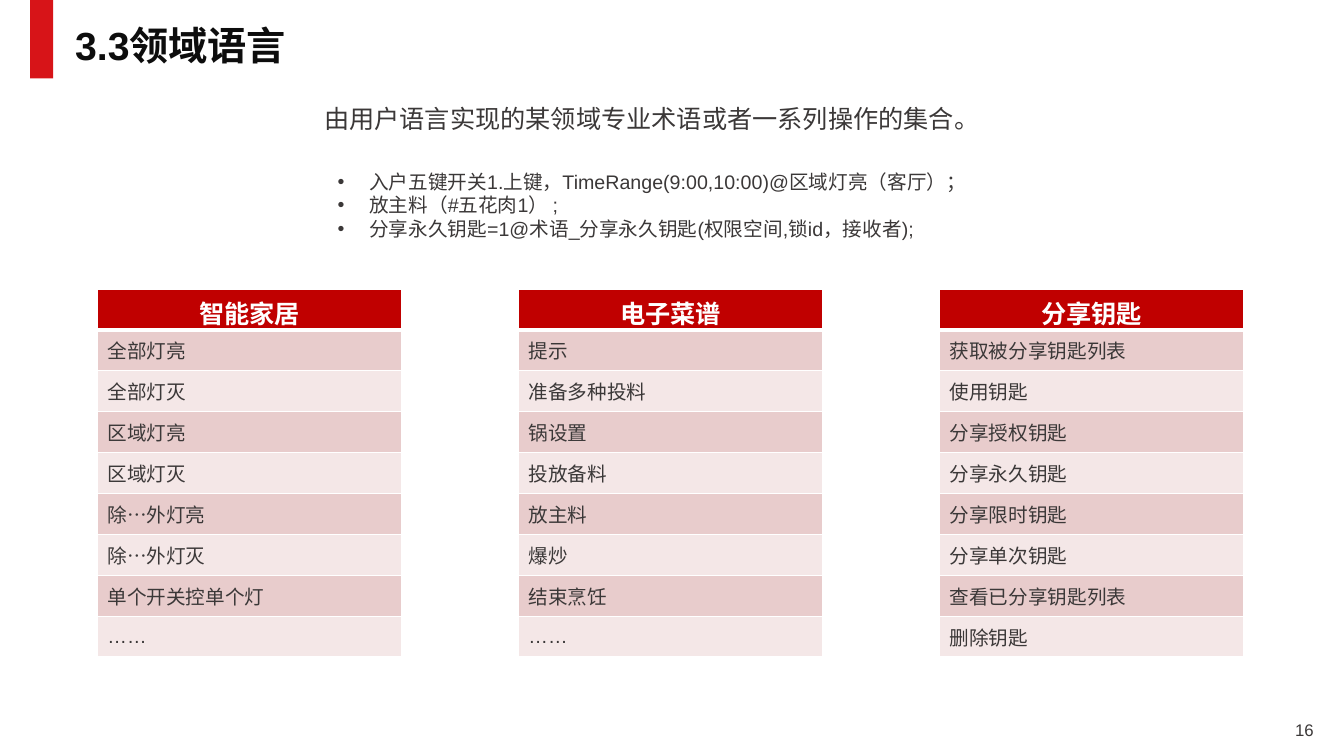
import pptx
import pptx.util
import pptx.dml.color
import pptx.enum.text
import pptx.enum.shapes
import pptx.oxml
import pptx.oxml.ns

Pt = pptx.util.Pt
Color = pptx.dml.color.RGBColor
Align = pptx.enum.text.PP_ALIGN
Anchor = pptx.enum.text.MSO_ANCHOR

TITLE = "3.3领域语言"
LEAD = "由用户语言实现的某领域专业术语或者一系列操作的集合。"
RULES = [
    "入户五键开关1.上键，TimeRange(9:00,10:00)@区域灯亮（客厅）；",
    "放主料（#五花肉1） ;",
    "分享永久钥匙=1@术语_分享永久钥匙(权限空间,锁id，接收者);",
]
TABLES = [
    ("智能家居", "全部灯亮", "全部灯灭", "区域灯亮", "区域灯灭",
     "除…外灯亮", "除…外灯灭", "单个开关控单个灯", "……"),
    ("电子菜谱", "提示", "准备多种投料", "锅设置", "投放备料",
     "放主料", "爆炒", "结束烹饪", "……"),
    ("分享钥匙", "获取被分享钥匙列表", "使用钥匙", "分享授权钥匙", "分享永久钥匙",
     "分享限时钥匙", "分享单次钥匙", "查看已分享钥匙列表", "删除钥匙"),
]
PAGE = "16"

FONT = "Arial"
RED = Color(0xD7, 0x14, 0x18)
HEAD = Color(0xC0, 0x00, 0x00)
BANDS = [Color(0xF4, 0xE7, 0xE7), Color(0xE8, 0xCC, 0xCC)]
WHITE = Color(0xFF, 0xFF, 0xFF)
BLACK = Color(0x0D, 0x0D, 0x0D)
GRAY = Color(0x3B, 0x38, 0x38)

LEFT, TOP, WIDTH, STEP, ROW = 69.5, 206.5, 217.5, 300.8, 29.2
INDENT = 22.5


def style(para, size, color=GRAY, bold=False, align=Align.LEFT):
    para.alignment = align
    font = para.font
    font.name, font.size, font.bold = FONT, Pt(size), bold
    font.color.rgb = color


def place(shape, left, top, width, height):
    shape.left, shape.top = Pt(left), Pt(top)
    shape.width, shape.height = Pt(width), Pt(height)


def add_text(slide, text, box, size, align=Align.LEFT):
    frame = slide.shapes.add_textbox(*map(Pt, box)).text_frame
    frame.word_wrap = True
    frame.text = text
    style(frame.paragraphs[0], size, align=align)


def add_bullet(para):
    props = para._p.get_or_add_pPr()
    props.set("marL", str(Pt(INDENT)))
    props.set("indent", str(-Pt(INDENT)))
    space = pptx.oxml.ns.nsdecls("a")
    props.append(pptx.oxml.parse_xml(f'<a:buFont {space} typeface="{FONT}"/>'))
    props.append(pptx.oxml.parse_xml(f'<a:buChar {space} char="•"/>'))


def add_edges(cell, top, bottom):
    props = cell._tc.get_or_add_tcPr()
    space = pptx.oxml.ns.nsdecls("a")
    edges = [("lnL", 1), ("lnR", 1), ("lnT", top), ("lnB", bottom)]
    for spot, (tag, width) in enumerate(edges):
        line = pptx.oxml.parse_xml(
            f'<a:{tag} {space} w="{Pt(width)}"><a:solidFill>'
            f'<a:srgbClr val="{WHITE}"/></a:solidFill></a:{tag}>')
        props.insert(spot, line)


def add_list(slide, left, words):
    size = map(Pt, (left, TOP, WIDTH, ROW * len(words)))
    table = slide.shapes.add_table(len(words), 1, *size).table
    for row, word in enumerate(words):
        table.rows[row].height = Pt(ROW)
        cell = table.cell(row, 0)
        cell.text = word
        cell.vertical_anchor = Anchor.MIDDLE
        cell.fill.solid()
        para = cell.text_frame.paragraphs[0]
        if row == 0:
            cell.fill.fore_color.rgb = HEAD
            style(para, 18, WHITE, True, Align.CENTER)
        else:
            cell.fill.fore_color.rgb = BANDS[row % 2]
            style(para, 14)
        add_edges(cell, 3 if row == 1 else 1, 3 if row == 0 else 1)


def main():
    deck = pptx.Presentation()
    deck.slide_width, deck.slide_height = Pt(960), Pt(540)
    slide = deck.slides.add_slide(deck.slide_layouts[1])

    bar = slide.shapes.add_shape(
        pptx.enum.shapes.MSO_SHAPE.RECTANGLE, *map(Pt, (21.5, 0, 16.5, 56)))
    bar.shadow.inherit = False
    bar.fill.solid()
    bar.fill.fore_color.rgb = RED
    bar.line.fill.background()

    title = slide.shapes.title
    place(title, 46.5, 16.5, 828, 35.5)
    title.text_frame.text = TITLE
    title.text_frame.vertical_anchor = Anchor.MIDDLE
    title.text_frame.auto_size = pptx.enum.text.MSO_AUTO_SIZE.NONE
    head = title.text_frame.paragraphs[0]
    head.line_spacing = 0.9
    style(head, 28, BLACK, True)

    add_text(slide, LEAD, (224.5, 70, 510, 29), 18)

    body = slide.placeholders[1]
    place(body, 234, 117.5, 466, 58)
    frame = body.text_frame
    frame.text = "\n".join(RULES)
    frame.word_wrap = False
    frame.auto_size = pptx.enum.text.MSO_AUTO_SIZE.SHAPE_TO_FIT_TEXT
    for para in frame.paragraphs:
        para.space_before = Pt(0)
        add_bullet(para)
        style(para, 14)

    for col, words in enumerate(TABLES):
        add_list(slide, LEFT + col * STEP, words)

    add_text(slide, PAGE, (729.5, 510.5, 216, 29), 12, Align.RIGHT)
    deck.save("out.pptx")


if __name__ == "__main__":
    main()
